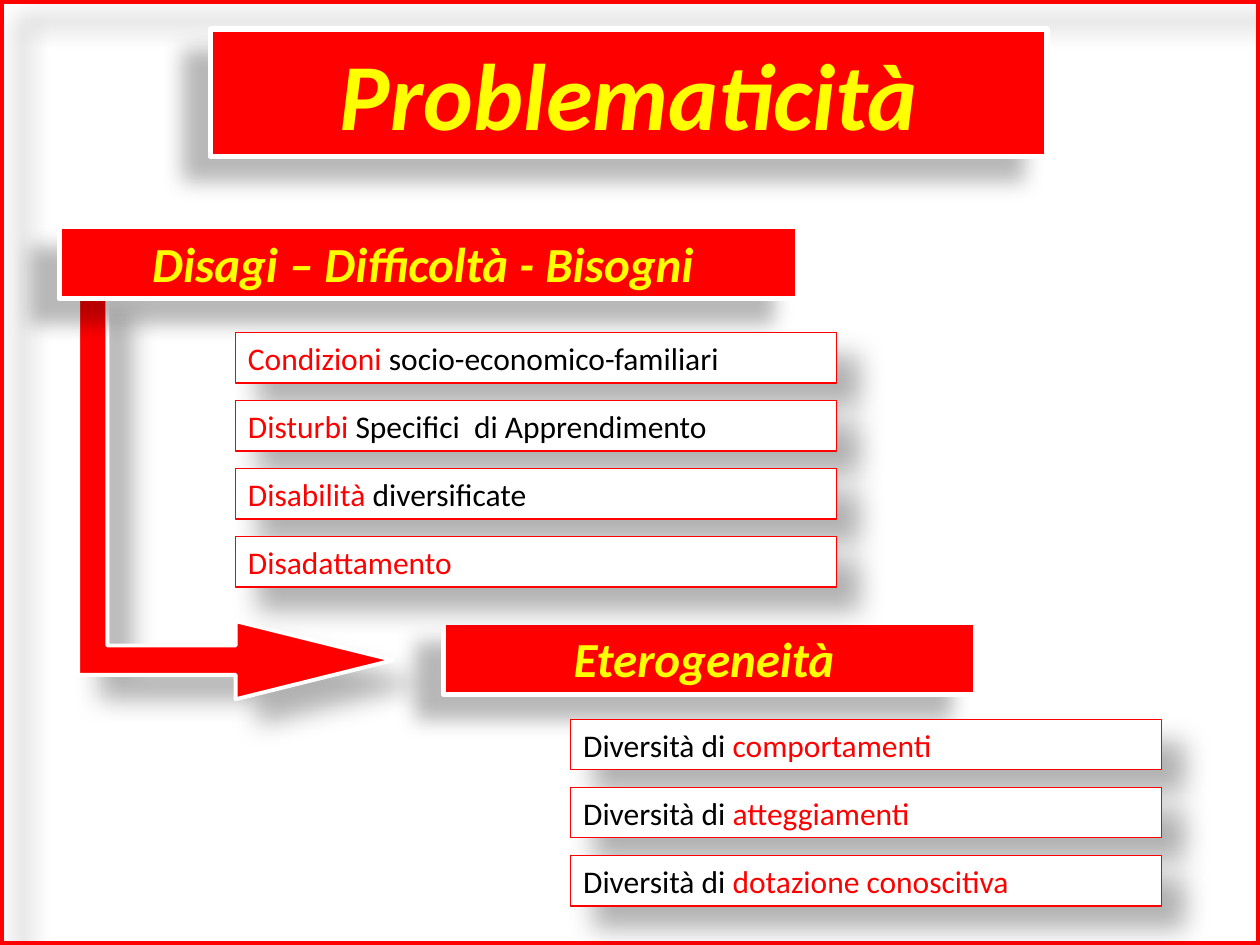
import lxml.etree
import pptx
import pptx.dml.color
import pptx.enum.shapes
import pptx.enum.text
import pptx.oxml.ns
import pptx.util

SHAPES = pptx.enum.shapes.MSO_SHAPE
RED, YELLOW, WHITE, BLACK = "FF0000", "FFFF00", "FFFFFF", "000000"
# Shadows: opacity %, blur pt, distance pt, direction in degrees
SOFT = (30, 15, 18, 45)
HEADING = (28, 11.8, 19.7, 141)

deck = pptx.Presentation()
deck.slide_width = pptx.util.Inches(10)
deck.slide_height = pptx.util.Inches(7.5)
slide = deck.slides.add_slide(deck.slide_layouts[6])

# Grid of 100 columns by 75 rows
COL = deck.slide_width / 100
ROW = deck.slide_height / 75


def color(hex_string):
    return pptx.dml.color.RGBColor.from_string(hex_string)


def add_block(kind, col, row, cols, rows, fill, line, weight, shadow):
    block = slide.shapes.add_shape(
        kind, int(col * COL), int(row * ROW), int(cols * COL), int(rows * ROW))
    if fill:
        block.fill.solid()
        block.fill.fore_color.rgb = color(fill)
    else:
        block.fill.background()
    block.line.color.rgb = color(line)
    block.line.width = pptx.util.Pt(weight)

    # Outer shadow goes into the effect list that inherit = False creates
    block.shadow.inherit = False
    opacity, blur, distance, direction = shadow
    qn = pptx.oxml.ns.qn
    effects = block.element.spPr.find(qn("a:effectLst"))
    outer = lxml.etree.SubElement(
        effects, qn("a:outerShdw"), blurRad=str(pptx.util.Pt(blur)),
        dist=str(pptx.util.Pt(distance)), dir=str(direction * 60000),
        algn="ctr", rotWithShape="0")
    tint = lxml.etree.SubElement(outer, qn("a:srgbClr"), val=BLACK)
    lxml.etree.SubElement(tint, qn("a:alpha"), val=str(opacity * 1000))
    return block


# Arrow from the first heading down to the second
arrow = add_block(SHAPES.BENT_UP_ARROW, 2.7, 27, 32, 25, RED, WHITE, 2.25, SOFT)
arrow.rotation = 90
for index, share in enumerate((0.093, 0.124, 0.5)):
    arrow.adjustments[index] = share

# Slide border
add_block(SHAPES.RECTANGLE, 0, 0, 100, 75, None, RED, 4.5, SOFT)

# Headings
headings = [
    ("Problematicità", 54, 16.7, 2.3, 66.4, 10.1),
    ("Eterogeneità ", 28, 35.2, 49.4, 42.2, 5.7),
    ("Disagi – Difficoltà - Bisogni ", 28, 4.7, 18, 58.6, 5.7),
]
for text, size, *place in headings:
    heading = add_block(SHAPES.RECTANGLE, *place, RED, WHITE, 3, HEADING)
    title = heading.text_frame.paragraphs[0]
    title.text = text
    title.alignment = pptx.enum.text.PP_ALIGN.CENTER
    title.font.name = "Calibri"
    title.font.size = pptx.util.Pt(size)
    title.font.bold = title.font.italic = True
    title.font.color.rgb = color(YELLOW)

# Lists of boxed items: left column, top row, width, run colours, items
ITEM_STEP = 5.4
lists = [
    (45.3, 57.1, 46.9, (BLACK, RED), [
        ("Diversità di ", "comportamenti"),
        ("Diversità di ", "atteggiamenti"),
        ("Diversità di ", "dotazione conoscitiva"),
    ]),
    (18.7, 26.4, 47.7, (RED, BLACK), [
        ("Condizioni ", "socio-economico-familiari"),
        ("Disturbi", " Specifici  di Apprendimento"),
        ("Disabilità", " diversificate"),
        ("Disadattamento",),
    ]),
]
for left, top, width, run_colors, items in lists:
    for number, parts in enumerate(items):
        item = add_block(SHAPES.RECTANGLE, left, top + number * ITEM_STEP,
                         width, 4, WHITE, RED, 0.75, SOFT)
        label = item.text_frame.paragraphs[0]
        label.alignment = pptx.enum.text.PP_ALIGN.LEFT
        label.font.name = "Calibri"
        label.font.size = pptx.util.Pt(18)
        for part, run_color in zip(parts, run_colors):
            run = label.add_run()
            run.text = part
            run.font.color.rgb = color(run_color)

deck.save("out.pptx")
